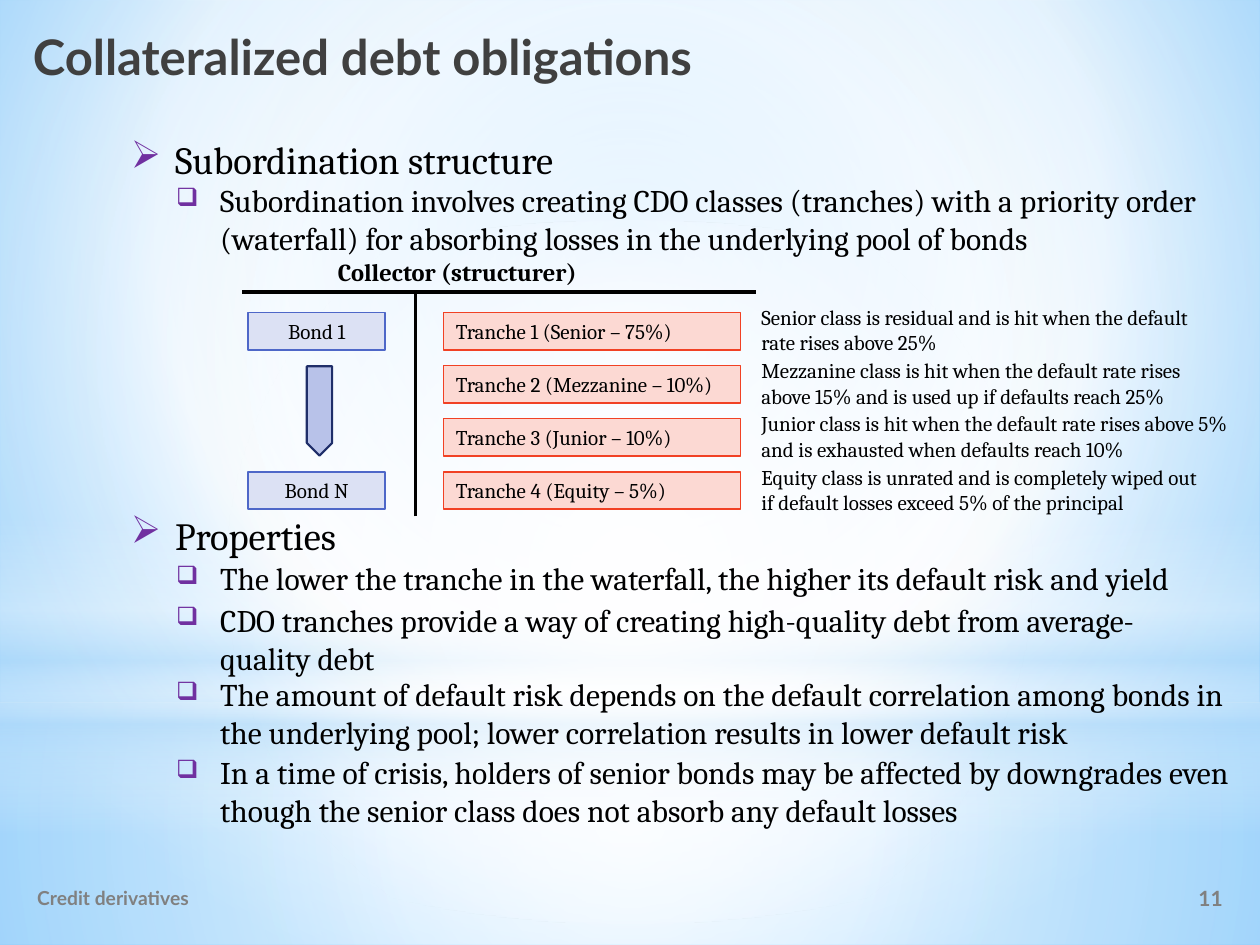
from lxml.etree import SubElement
from pptx import Presentation
from pptx.dml.color import RGBColor
from pptx.enum.shapes import MSO_CONNECTOR, MSO_SHAPE
from pptx.enum.text import MSO_ANCHOR, PP_ALIGN
from pptx.oxml.ns import qn
from pptx.util import Cm, Pt

CENTER = (50, 50, 50, 50)
GLOWS = [
    (MSO_SHAPE.RECTANGLE, (0, 14.17, 25.4, 4.88), CENTER,
     [(0, "FFFFFF", 91), (37, "FFFFFF", 76), (100, "B4DCFA", 79)]),
    (MSO_SHAPE.RECTANGLE, (0, 0, 25.4, 14.17), CENTER,
     [(0, "FFFFFF", 89), (48, "FFFFFF", 62), (100, "B4DCFA", 79)]),
    (MSO_SHAPE.RECTANGLE, (0, 10.46, 25.4, 6.35), None,
     [(0, "FFFFFF", 0), (29, "FFFFFF", 30), (45, "B4DCFA", 40),
      (55, "FFFFFF", 26), (65, "B4DCFA", 60), (100, "FFFFFF", 0)]),
    (MSO_SHAPE.OVAL, (0, 4.45, 25.4, 14.17), CENTER,
     [(0, "FFFFFF", 100), (56, "FFFFFF", 0)]),
]
HEADINGS = [("Subordination structure", 2.62), ("Properties", 10.19)]
POINTS = [
    ("Subordination involves creating CDO classes (tranches) with a priority order "
     "(waterfall) for absorbing losses in the underlying pool of bonds", 3.53, 21.41),
    ("The lower the tranche in the waterfall, the higher its default risk and yield",
     11.15, 21.41),
    ("CDO tranches provide a way of creating high-quality debt from average-quality debt",
     11.99, 21.41),
    ("The amount of default risk depends on the default correlation among bonds in "
     "the underlying pool; lower correlation results in lower default risk", 13.49, 22),
    ("In a time of crisis, holders of senior bonds may be affected by downgrades even "
     "though the senior class does not absorb any default losses", 15.06, 21.79),
]
TRANCHES = [
    ("Tranche 1 (Senior – 75%)", 9.6,
     "Senior class is residual and is hit when the default rate rises above 25%"),
    ("Tranche 2 (Mezzanine – 10%)", 9.6,
     "Mezzanine class is hit when the default rate rises above 15% "
     "and is used up if defaults reach 25%"),
    ("Tranche 3 (Junior – 10%)", 9.9,
     "Junior class is hit when the default rate rises above 5% "
     "and is exhausted when defaults reach 10%"),
    ("Tranche 4 (Equity – 5%)", 9.6,
     "Equity class is unrated and is completely wiped out "
     "if default losses exceed 5% of the principal"),
]
TOP, STEP = 6.3, 1.07


def rgb(value):
    return RGBColor.from_string(value)


def set_gradient(fill, grad, stops, focus=None):
    fill.gradient()
    for child in list(grad()):
        grad().remove(child)
    gs_list = SubElement(grad(), qn("a:gsLst"))
    for pos, color, alpha in stops:
        gs = SubElement(gs_list, qn("a:gs"), pos=str(pos * 1000))
        clr = SubElement(gs, qn("a:srgbClr"), val=color)
        if alpha < 100:
            SubElement(clr, qn("a:alpha"), val=str(alpha * 1000))
    if focus:
        radial = SubElement(grad(), qn("a:path"), {"path": "circle"})
        sides = {k: str(v * 1000) for k, v in zip("ltrb", focus)}
        SubElement(radial, qn("a:fillToRect"), sides)
    else:
        SubElement(grad(), qn("a:lin"), ang="5400000", scaled="0")


class Deck:
    font = "Cambria"
    ink = "000000"
    accent = "7030A0"

    def __init__(self, prs):
        self.s = prs.slides.add_slide(prs.slide_layouts[5])

    def background(self, stops, focus):
        set_gradient(self.s.background.fill,
                     lambda: self.s.element.xpath(".//p:bgPr/a:gradFill")[0],
                     stops, focus)

    def put_text(self, sp, text, size, color=None, align=PP_ALIGN.LEFT,
                 anchor=MSO_ANCHOR.TOP, **fmt):
        tf = sp.text_frame
        tf.word_wrap = True
        tf.vertical_anchor = anchor
        p = tf.paragraphs[0]
        p.alignment = align
        r = p.add_run()
        r.text = text
        for name, value in {"name": self.font, "size": Pt(size), **fmt}.items():
            setattr(r.font, name, value)
        r.font.color.rgb = rgb(color or self.ink)
        return p

    def title(self, text, box, **fmt):
        sp = self.s.shapes.title
        for name, value in zip(("left", "top", "width", "height"), box):
            setattr(sp, name, Cm(value))
        self.put_text(sp, text, **fmt)
        self.s.shapes.element.append(sp.element)

    def text(self, text, box, size, **fmt):
        sp = self.s.shapes.add_textbox(*map(Cm, box))
        return self.put_text(sp, text, size, **fmt)

    def bullet(self, text, box, size, char, level=0, scale=100):
        p = self.text(text, box, size)
        p.level = level
        ppr = p._p.get_or_add_pPr()
        ppr.set("marL", str(Cm(0.89)))
        ppr.set("indent", str(-Cm(0.89)))
        clr = SubElement(ppr, qn("a:buClr"))
        SubElement(clr, qn("a:srgbClr"), val=self.accent)
        SubElement(ppr, qn("a:buSzPct"), val=str(scale * 1000))
        SubElement(ppr, qn("a:buChar"), char=char)

    def shape(self, kind, box, fill, line, width=1):
        sp = self.s.shapes.add_shape(kind, *map(Cm, box))
        sp.shadow.inherit = False
        sp.fill.solid()
        sp.fill.fore_color.rgb = rgb(fill)
        sp.line.color.rgb = rgb(line)
        sp.line.width = Pt(width)
        return sp

    def label(self, text, box, fill, line, **fmt):
        sp = self.shape(MSO_SHAPE.RECTANGLE, box, fill, line)
        self.put_text(sp, text, 12, **fmt)

    def glow(self, kind, box, focus, stops):
        sp = self.s.shapes.add_shape(kind, *map(Cm, box))
        sp.shadow.inherit = False
        sp.line.fill.background()
        set_gradient(sp.fill, lambda: sp.element.spPr.find(qn("a:gradFill")),
                     stops, focus)

    def line(self, *ends):
        cn = self.s.shapes.add_connector(MSO_CONNECTOR.STRAIGHT, *map(Cm, ends))
        cn.line.color.rgb = rgb(self.ink)
        cn.line.width = Pt(2)
        SubElement(cn._element.spPr, qn("a:effectLst"))


def main():
    prs = Presentation()
    prs.slide_width, prs.slide_height = Cm(25.4), Cm(19.05)
    d = Deck(prs)
    d.background([(0, "9ED5FF", 100), (60, "FFFFFF", 100), (100, "5BB9FF", 100)],
                 (20, 10, 20, 60))
    for glow in GLOWS:
        d.glow(*glow)

    footer = {"name": "Lato", "bold": True, "color": "808080",
              "anchor": MSO_ANCHOR.MIDDLE}
    d.text("Credit derivatives", (0.5, 17.6, 9.2, 1), 11, **footer)
    d.text("11", (19.9, 17.6, 5, 1), 12, align=PP_ALIGN.RIGHT, **footer)
    d.title("Collateralized debt obligations", (0.41, 0.41, 15.3, 1.8),
            size=28, name="Lato", bold=True, color="404040")

    for text, y in HEADINGS:
        d.bullet(text, (2.39, y, 10.3, 1.19), 22, "➢")
    for text, y, width in POINTS:
        d.bullet(text, (3.3, y, width, 1.8), 18, "❑", level=1, scale=80)

    d.text("Collector (structurer)", (6.35, 5.05, 5.74, 0.86), 14,
           align=PP_ALIGN.CENTER, bold=True)
    for text, row in (("Bond 1", 0), ("Bond N", 3)):
        d.label(text, (5, TOP + row * STEP, 2.77, 0.76), "DCE1F4", "4E67C8",
                align=PP_ALIGN.CENTER)
    arrow = d.shape(MSO_SHAPE.PENTAGON, (5.54, 8.03, 1.8, 0.51),
                    "B8C2E9", "1F2E69", 1.25)
    arrow.rotation = 90
    for row, (name, width, note) in enumerate(TRANCHES):
        y = TOP + row * STEP
        d.label(name, (8.94, y, 5.99, 0.76), "FCD9D3", "F14124")
        d.text(note, (15.1, y - 0.28, width, 1.27), 12)
    d.line(8.38, 10.41, 8.38, 5.89)
    d.line(4.88, 5.89, 15.24, 5.89)
    prs.save("out.pptx")


if __name__ == "__main__":
    main()
